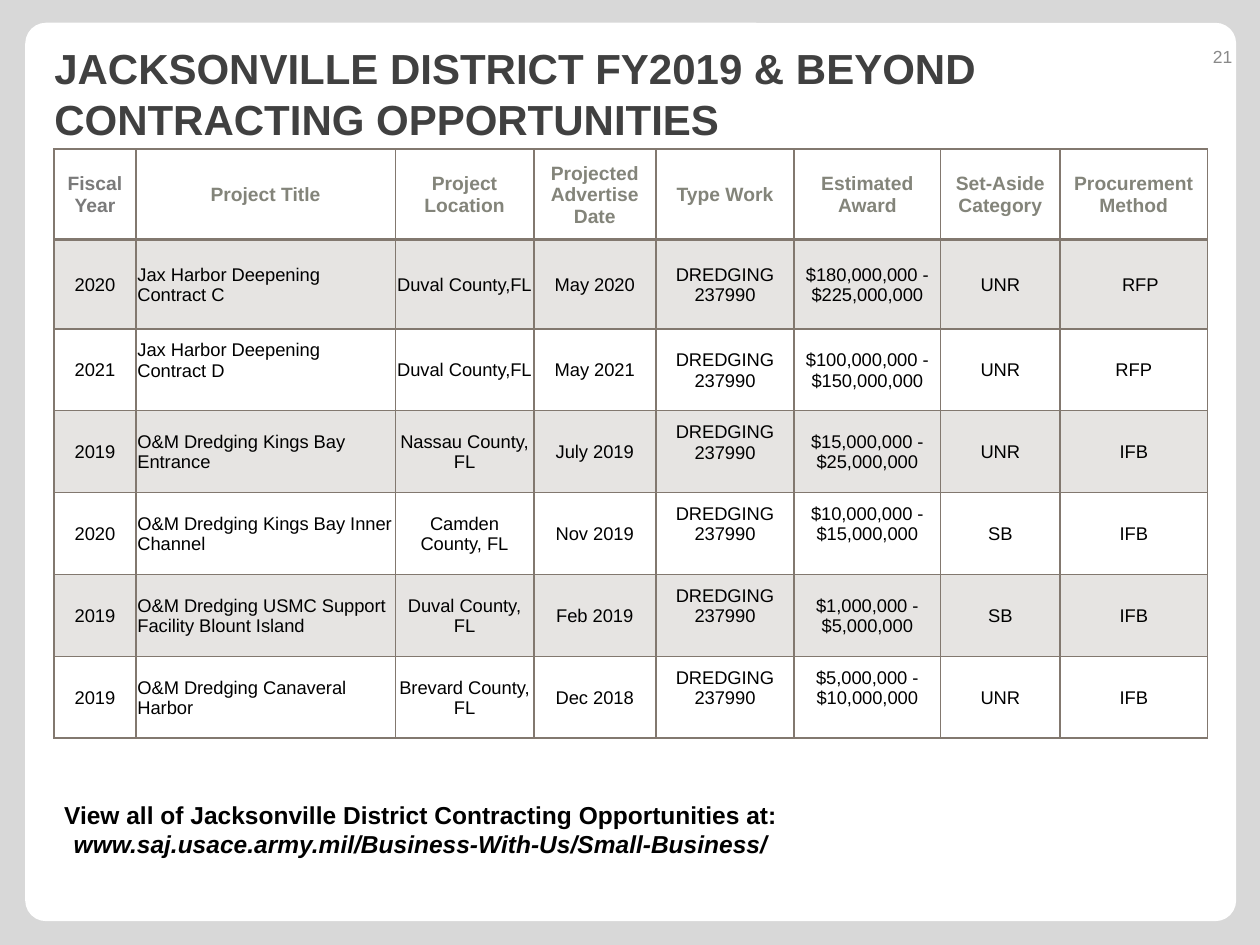
from dataclasses import dataclass

from lxml.etree import SubElement
from pptx import Presentation
from pptx.dml.color import RGBColor
from pptx.enum.shapes import MSO_SHAPE as Shape
from pptx.enum.text import MSO_ANCHOR as Anchor, MSO_AUTO_SIZE as AutoSize, PP_ALIGN as Align
from pptx.oxml.ns import qn
from pptx.util import Cm, Pt


@dataclass(frozen=True)
class Theme:
    font: str = "Arial"
    backdrop: str = "D8D8D8"
    panel: str = "FFFFFF"
    title: str = "404040"
    number: str = "898989"
    first_header: str = "7A7A7A"
    header: str = "83847A"
    body: str = "000000"
    rule: str = "82786F"
    band_opacity: int = 20
    title_size: float = 24
    note_size: float = 14
    header_size: float = 11
    body_size: float = 10.5
    number_size: float = 10


THEME = Theme()

COLUMN_WIDTHS = [1.65, 5.23, 2.79, 2.46, 2.79, 2.95, 2.41, 2.97]
ROW_HEIGHTS = [1.83, 1.8] + [1.65] * 5
TITLE_COLUMN, WORK_COLUMN, AWARD_COLUMN, METHOD_COLUMN = 1, 4, 5, 7

HEADERS = ["Fiscal Year", "Project Title", "Project Location", "Projected Advertise Date",
           "Type Work", "Estimated Award", "Set-Aside Category", "Procurement Method"]
WORK = "DREDGING 237990"
PROJECTS = [
    ["2020", "Jax Harbor Deepening Contract C", "Duval County,FL", "May 2020",
     WORK, "$180,000,000 -$225,000,000", "UNR", "RFP"],
    ["2021", "Jax Harbor Deepening Contract D", "Duval County,FL", "May 2021",
     WORK, "$100,000,000 - $150,000,000", "UNR", "RFP"],
    ["2019", "O&M Dredging Kings Bay Entrance", "Nassau County, FL", "July 2019",
     WORK, "$15,000,000 - $25,000,000", "UNR", "IFB"],
    ["2020", "O&M Dredging Kings Bay Inner Channel", "Camden County, FL", "Nov 2019",
     WORK, "$10,000,000 - $15,000,000", "SB", "IFB"],
    ["2019", "O&M Dredging USMC Support Facility Blount Island", "Duval County, FL", "Feb 2019",
     WORK, "$1,000,000 - $5,000,000", "SB", "IFB"],
    ["2019", "O&M Dredging Canaveral Harbor", "Brevard County, FL", "Dec 2018",
     WORK, "$5,000,000 - $10,000,000", "UNR", "IFB"],
]
# Cells whose text sits half a line above the middle
RAISED = {(2, TITLE_COLUMN), (4, AWARD_COLUMN), (6, AWARD_COLUMN)}
RAISED |= {(row, WORK_COLUMN) for row in range(3, 7)}


def write(para, text, *, size, color, bold=False, italic=False, align=Align.LEFT):
    """Add formatted text to a paragraph."""
    para.alignment = align
    span = para.add_run()
    span.text = text
    font = span.font
    font.name, font.size = THEME.font, Pt(size)
    font.bold, font.italic = bold, italic
    font.color.rgb = RGBColor.from_string(color)


def place(shape, left, top, width, height):
    shape.left, shape.top, shape.width, shape.height = map(Cm, (left, top, width, height))


def add_panel(slide):
    panel = slide.shapes.add_shape(Shape.ROUNDED_RECTANGLE, Cm(0.51), Cm(0.46), Cm(24.41), Cm(18.11))
    panel.adjustments[0] = 0.023
    panel.shadow.inherit = False
    panel.fill.solid()
    panel.fill.fore_color.rgb = RGBColor.from_string(THEME.panel)
    panel.line.fill.background()
    slide.shapes._spTree.insert(2, panel._element)  # behind the title


def set_title(slide, text):
    title = slide.shapes.title
    place(title, 0.84, 0.76, 23.29, 2.24)
    frame = title.text_frame
    frame.auto_size = AutoSize.NONE
    frame.vertical_anchor = Anchor.MIDDLE
    write(frame.paragraphs[0], text, size=THEME.title_size, color=THEME.title, bold=True)


def add_text_box(slide, left, top, width, height, anchor=Anchor.TOP):
    box = slide.shapes.add_textbox(Cm(left), Cm(top), Cm(width), Cm(height))
    frame = box.text_frame
    frame.word_wrap = True
    frame.vertical_anchor = anchor
    return frame


def set_borders(cell, row):
    """Thin rules all round, with a heavy one under the header row."""
    heavy = {(0, "lnB"), (1, "lnT")}
    for side in ("lnL", "lnR", "lnT", "lnB"):
        width = Pt(2 if (row, side) in heavy else 1)
        line = SubElement(cell._tc.get_or_add_tcPr(), qn(f"a:{side}"), w=str(width))
        fill = SubElement(line, qn("a:solidFill"))
        SubElement(fill, qn("a:srgbClr"), val=THEME.rule)


def set_cell_fill(cell, banded):
    if not banded:
        cell.fill.background()
        return
    cell.fill.solid()
    cell.fill.fore_color.rgb = RGBColor.from_string(THEME.rule)
    color = cell._tc.tcPr.find(qn("a:solidFill")).find(qn("a:srgbClr"))
    SubElement(color, qn("a:alpha"), val=str(THEME.band_opacity * 1000))


def format_cell(cell, row, column, text):
    indented = (row, column) == (1, METHOD_COLUMN)
    cell.vertical_anchor = Anchor.MIDDLE
    cell.margin_left = Cm(1.25 if indented else 0.03)
    cell.margin_right = cell.margin_top = Cm(0.03)
    cell.margin_bottom = Cm(0.4 if (row, column) in RAISED else 0)
    set_borders(cell, row)
    set_cell_fill(cell, banded=row % 2 == 1)

    para = cell.text_frame.paragraphs[0]
    if row == 0:
        color = THEME.header if column else THEME.first_header
        write(para, text, size=THEME.header_size, color=color, bold=True, align=Align.CENTER)
    else:
        align = Align.LEFT if column == TITLE_COLUMN or indented else Align.CENTER
        write(para, text, size=THEME.body_size, color=THEME.body, align=align)


def add_project_table(slide):
    rows = [HEADERS] + PROJECTS
    table = slide.shapes.add_table(len(rows), len(HEADERS), Cm(1.09), Cm(3),
                                   Cm(sum(COLUMN_WIDTHS)), Cm(sum(ROW_HEIGHTS))).table
    for column, width in zip(table.columns, COLUMN_WIDTHS):
        column.width = Cm(width)
    for row, height in zip(table.rows, ROW_HEIGHTS):
        row.height = Cm(height)
    for row, texts in enumerate(rows):
        for column, text in enumerate(texts):
            format_cell(table.cell(row, column), row, column, text)


def main():
    deck = Presentation()
    deck.slide_width, deck.slide_height = Cm(25.4), Cm(19.05)
    slide = deck.slides.add_slide(deck.slide_layouts[5])

    # Backdrop, panel and title
    slide.background.fill.solid()
    slide.background.fill.fore_color.rgb = RGBColor.from_string(THEME.backdrop)
    add_panel(slide)
    set_title(slide, "JACKSONVILLE DISTRICT FY2019 & BEYOND CONTRACTING OPPORTUNITIES")

    # Slide number
    number = add_text_box(slide, 23.06, 0.64, 2.03, 1.02, anchor=Anchor.MIDDLE)
    write(number.paragraphs[0], "21", size=THEME.number_size, color=THEME.number, align=Align.RIGHT)

    # Contracting opportunities
    add_project_table(slide)

    # Where to find the full list
    note = add_text_box(slide, -0.71, 16, 18.39, 1.45)
    style = dict(size=THEME.note_size, color=THEME.body, bold=True, align=Align.CENTER)
    write(note.paragraphs[0], "View all of Jacksonville District Contracting Opportunities at:", **style)
    write(note.add_paragraph(), "www.saj.usace.army.mil/Business-With-Us/Small-Business/",
          italic=True, **style)

    deck.save("out.pptx")


if __name__ == "__main__":
    main()
